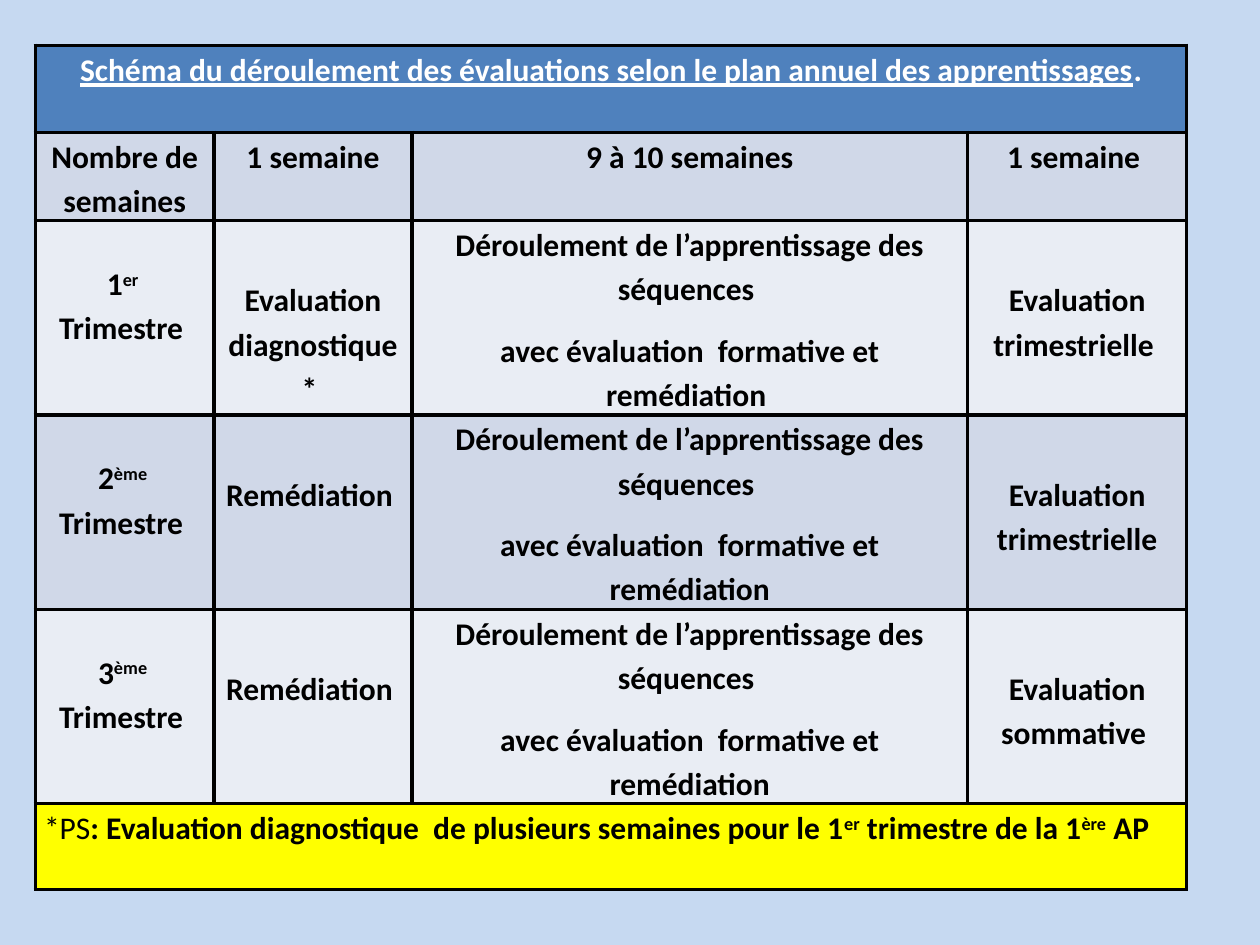
from dataclasses import dataclass

import pptx
import pptx.dml.color
import pptx.enum.text
import pptx.oxml
import pptx.oxml.ns
import pptx.util

Inches = pptx.util.Inches
Pt = pptx.util.Pt
CENTER = pptx.enum.text.PP_ALIGN.CENTER
LEFT = pptx.enum.text.PP_ALIGN.LEFT


@dataclass(frozen=True)
class Theme:
    font: str = "Calibri"
    size: int = 18
    background: str = "C6D9F1"
    title_fill: str = "4F81BD"
    title_text: str = "FFFFFF"
    text: str = "000000"
    band_dark: str = "D0D8E8"
    band_light: str = "E9EDF4"
    note_fill: str = "FFFF00"
    border: str = "000000"
    border_width: float = 2.25


@dataclass(frozen=True)
class Term:
    number: str
    ordinal: str
    start: str
    lesson_end: str
    final: str
    fill: str


THEME = Theme()
COLUMNS = (1.42, 1.57, 4.41, 1.74)
ROWS = (0.69, 0.69, 1.52, 1.52, 1.52, 0.68)
HEADERS = ("Nombre de semaines", "1 semaine", "9 à 10 semaines", "1 semaine ")
LESSON = "Déroulement de l’apprentissage des séquences "
FOLLOW_UP = "avec évaluation  formative et remédiation"
TERMS = (
    Term("1", "er ", "Evaluation diagnostique* ", " ", "Evaluation trimestrielle ", THEME.band_light),
    Term("2", "ème ", "Remédiation ", "", "Evaluation trimestrielle", THEME.band_dark),
    Term("3", "ème ", "Remédiation ", "", "Evaluation sommative ", THEME.band_light),
)


def rgb(value: str) -> pptx.dml.color.RGBColor:
    return pptx.dml.color.RGBColor.from_string(value)


def add_text(p, text: str, *, color: str = THEME.text, bold: bool = True,
             underline: bool = False, raised: bool = False) -> None:
    r = p.add_run()
    r.text = text
    r.font.name = THEME.font
    r.font.size = Pt(THEME.size)
    r.font.bold = bold
    r.font.underline = underline
    r.font.color.rgb = rgb(color)
    if raised:
        r._r.get_or_add_rPr().set("baseline", "30000")


def add_borders(cell) -> None:
    tc_pr = cell._tc.get_or_add_tcPr()
    for i, side in enumerate(("lnL", "lnR", "lnT", "lnB")):
        line = pptx.oxml.parse_xml(
            f'<a:{side} {pptx.oxml.ns.nsdecls("a")} w="{Pt(THEME.border_width)}">'
            f'<a:solidFill><a:srgbClr val="{THEME.border}"/></a:solidFill></a:{side}>'
        )
        tc_pr.insert(i, line)


def paint(cell, fill: str) -> None:
    cell.fill.solid()
    cell.fill.fore_color.rgb = rgb(fill)
    add_borders(cell)


def paragraphs(cell, count: int, *, align=CENTER, after: float = 0, top: float = 0) -> list:
    cell.margin_left = cell.margin_right = Inches(0.07)
    cell.margin_top = Inches(top)
    cell.margin_bottom = 0
    tf = cell.text_frame
    result = [tf.paragraphs[0]] + [tf.add_paragraph() for _ in range(count - 1)]
    for p in result:
        p.alignment = align
        p.line_spacing = 1.15
        p.space_after = Pt(after)
    return result


def write_cell(cell, *lines: str, after: float = 10, top: float = 0) -> None:
    for p, line in zip(paragraphs(cell, len(lines), after=after, top=top), lines):
        add_text(p, line)


def merge_row(table, row: int):
    cell = table.cell(row, 0)
    cell.merge(table.cell(row, len(COLUMNS) - 1))
    return cell


def write_title(table) -> None:
    p = merge_row(table, 0).text_frame.paragraphs[0]
    p.alignment = CENTER
    add_text(p, "Schéma du déroulement des évaluations selon le plan annuel des apprentissages",
             color=THEME.title_text, underline=True)
    add_text(p, ".", color=THEME.title_text)


def write_term(table, row: int, term: Term) -> None:
    name, start, lessons, final = (table.cell(row, c) for c in range(len(COLUMNS)))
    ordinal, label = paragraphs(name, 2, top=0.31)
    add_text(ordinal, term.number)
    add_text(ordinal, term.ordinal, raised=True)
    add_text(label, "Trimestre ")
    write_cell(start, term.start, top=0.44)
    write_cell(lessons, LESSON, FOLLOW_UP + term.lesson_end)
    write_cell(final, term.final, top=0.44)


def write_note(table) -> None:
    p = paragraphs(merge_row(table, len(ROWS) - 1), 1, align=LEFT)[0]
    add_text(p, "*PS", bold=False)
    add_text(p, ": Evaluation diagnostique  de plusieurs semaines pour le 1")
    add_text(p, "er", raised=True)
    add_text(p, " trimestre de la 1")
    add_text(p, "ère", raised=True)
    add_text(p, " AP")


def main() -> None:
    prs = pptx.Presentation()
    prs.slide_width, prs.slide_height = Inches(10), Inches(7.5)
    s = prs.slides.add_slide(prs.slide_layouts[6])
    s.background.fill.solid()
    s.background.fill.fore_color.rgb = rgb(THEME.background)

    table = s.shapes.add_table(len(ROWS), len(COLUMNS), Inches(0.28), Inches(0.36),
                               Inches(sum(COLUMNS)), Inches(sum(ROWS))).table
    for column, width in zip(table.columns, COLUMNS):
        column.width = Inches(width)
    fills = (THEME.title_fill, THEME.band_dark, *(t.fill for t in TERMS), THEME.note_fill)
    for row, height, fill in zip(table.rows, ROWS, fills):
        row.height = Inches(height)
        for cell in row.cells:
            paint(cell, fill)

    write_title(table)
    for c, header in enumerate(HEADERS):
        write_cell(table.cell(1, c), header, after=10 if c else 0)
    for row, term in enumerate(TERMS, start=2):
        write_term(table, row, term)
    write_note(table)
    prs.save("out.pptx")


if __name__ == "__main__":
    main()
